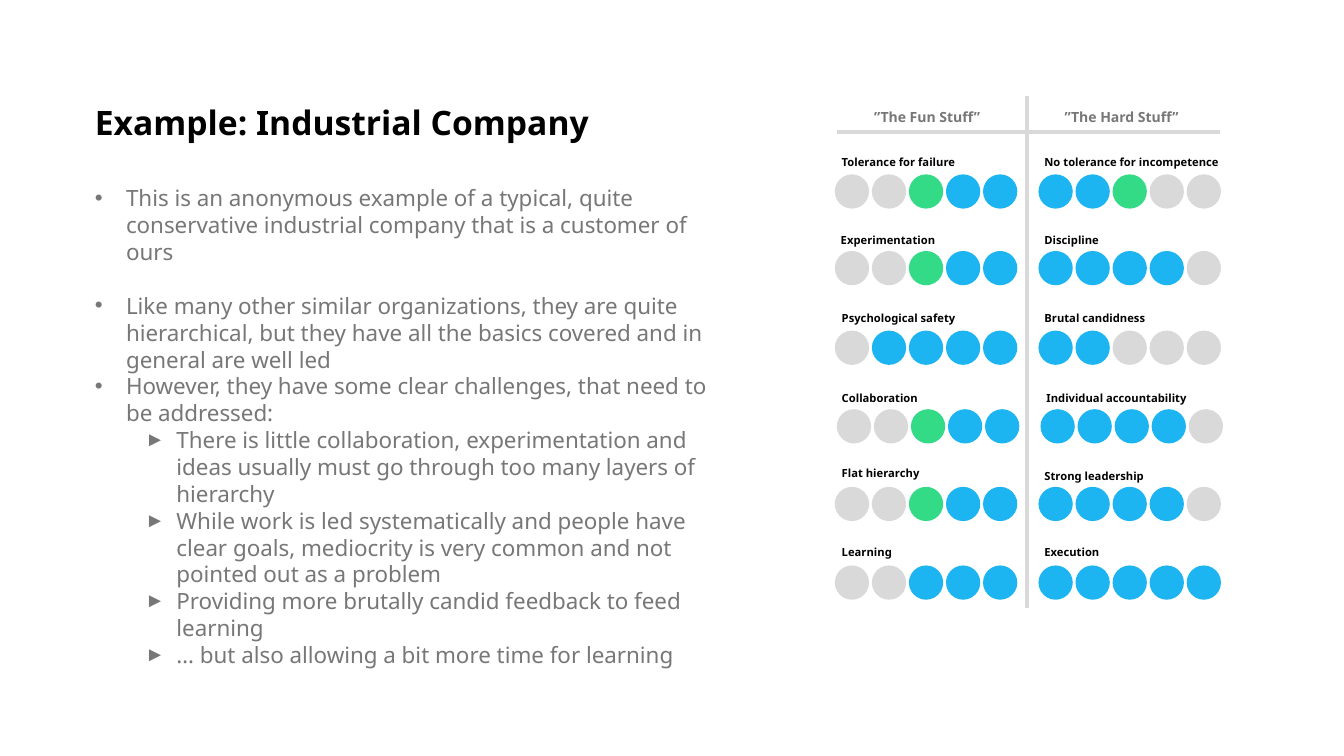
import dataclasses

import lxml.etree
import pptx
import pptx.dml.color
import pptx.enum.shapes
import pptx.enum.text
import pptx.oxml.ns
import pptx.util

Inches = pptx.util.Inches
Pt = pptx.util.Pt
qn = pptx.oxml.ns.qn

FONT = "Noto Sans"
BLACK, GREY, LIGHT = "000000", "777777", "D9D9D9"
DOT_COLOURS = {"b": "1CB5F2", "g": "33DB87", "-": LIGHT}
DOT_SIZE = 0.34
DOT_PITCH = 1.47 / 4
LEFT = pptx.enum.text.PP_ALIGN.LEFT
CENTER = pptx.enum.text.PP_ALIGN.CENTER
TOP = pptx.enum.text.MSO_ANCHOR.TOP
MIDDLE = pptx.enum.text.MSO_ANCHOR.MIDDLE


@dataclasses.dataclass
class Rating:
    """A labelled row of five dots: b is blue, g is green, - is grey."""
    label: str
    label_left: float
    label_top: float
    dots: str
    dots_left: float
    dots_top: float


@dataclasses.dataclass
class Bullet:
    text: str
    level: int = 0
    space_after: float = 0


@dataclasses.dataclass
class BulletStyle:
    symbol: str
    indent: float
    size: int


RATINGS = [
    Rating("Tolerance for failure", 8.25, 1.49, "--gbb", 8.28, 1.73),
    Rating("No tolerance for incompetence", 10.26, 1.49, "bbg--", 10.3, 1.73),
    Rating("Experimentation", 8.24, 2.27, "--gbb", 8.28, 2.49),
    Rating("Discipline", 10.26, 2.27, "bbbb-", 10.3, 2.49),
    Rating("Psychological safety", 8.25, 3.04, "-bbbb", 8.28, 3.28),
    Rating("Brutal candidness", 10.26, 3.04, "bb---", 10.3, 3.28),
    Rating("Collaboration", 8.25, 3.83, "--gbb", 8.3, 4.06),
    Rating("Individual accountability", 10.28, 3.83, "bbbb-", 10.32, 4.06),
    Rating("Flat hierarchy", 8.25, 4.58, "--gbb", 8.28, 4.83),
    Rating("Strong leadership", 10.26, 4.61, "bbbb-", 10.3, 4.83),
    Rating("Learning", 8.25, 5.36, "--bbb", 8.28, 5.61),
    Rating("Execution", 10.26, 5.36, "bbbbb", 10.3, 5.61),
]

BULLETS = [
    Bullet("This is an anonymous example of a typical, quite conservative "
           "industrial company that is a customer of ours", space_after=19.2),
    Bullet("Like many other similar organizations, they are quite hierarchical, "
           "but they have all the basics covered and in general are well led"),
    Bullet("However, they have some clear challenges, that need to be addressed:"),
    Bullet("There is little collaboration, experimentation and ideas usually "
           "must go through too many layers of hierarchy", 1),
    Bullet("While work is led systematically and people have clear goals, "
           "mediocrity is very common and not pointed out as a problem", 1),
    Bullet("Providing more brutally candid feedback to feed learning", 1),
    Bullet("… but also allowing a bit more time for learning", 1),
]
BULLET_STYLES = [BulletStyle("•", 0.31, 100), BulletStyle("►", 0.81, 90)]


def rgb(colour: str) -> pptx.dml.color.RGBColor:
    return pptx.dml.color.RGBColor.from_string(colour)


def place(box, left: float, top: float, width: float, height: float) -> None:
    box.left, box.top = Inches(left), Inches(top)
    box.width, box.height = Inches(width), Inches(height)


def format_frame(frame, anchor) -> None:
    frame.word_wrap = True
    frame.auto_size = pptx.enum.text.MSO_AUTO_SIZE.NONE
    frame.vertical_anchor = anchor


def write(para, text: str, size: float, colour: str, bold: bool = True,
          align=LEFT) -> None:
    para.text = text
    para.alignment = align
    for span in para.runs:
        span.font.name = FONT
        span.font.size = Pt(size)
        span.font.bold = bold
        span.font.color.rgb = rgb(colour)


def add_label(page, text: str, left: float, top: float, width: float,
              size: float, colour: str, align=LEFT) -> None:
    box = page.shapes.add_textbox(Inches(left), Inches(top),
                                  Inches(width), Inches(0.27))
    format_frame(box.text_frame, TOP)
    write(box.text_frame.paragraphs[0], text, size, colour, align=align)


def add_rule(page, x1: float, y1: float, x2: float, y2: float) -> None:
    rule = page.shapes.add_connector(
        pptx.enum.shapes.MSO_CONNECTOR.STRAIGHT,
        Inches(x1), Inches(y1), Inches(x2), Inches(y2))
    rule.line.color.rgb = rgb(LIGHT)
    rule.line.width = Pt(3)
    lxml.etree.SubElement(rule.element.spPr, qn("a:effectLst"))


def add_rating(page, rating: Rating) -> None:
    add_label(page, rating.label, rating.label_left, rating.label_top,
              2.25, 8, BLACK)
    for index, key in enumerate(rating.dots):
        dot = page.shapes.add_shape(
            pptx.enum.shapes.MSO_SHAPE.OVAL,
            Inches(rating.dots_left + index * DOT_PITCH),
            Inches(rating.dots_top), Inches(DOT_SIZE), Inches(DOT_SIZE))
        dot.shadow.inherit = False
        dot.fill.solid()
        dot.fill.fore_color.rgb = rgb(DOT_COLOURS[key])
        dot.line.fill.background()


def set_bullet(para, style: BulletStyle) -> None:
    properties = para._p.get_or_add_pPr()
    properties.set("marL", str(Inches(style.indent)))
    properties.set("indent", str(Inches(-0.31)))
    colour = lxml.etree.SubElement(properties, qn("a:buClr"))
    lxml.etree.SubElement(colour, qn("a:srgbClr"), val=GREY)
    lxml.etree.SubElement(properties, qn("a:buSzPct"), val=str(style.size * 1000))
    lxml.etree.SubElement(properties, qn("a:buFont"), typeface="Arial")
    lxml.etree.SubElement(properties, qn("a:buChar"), char=style.symbol)


def fill_title(title) -> None:
    place(title, 0.84, 1.05, 5.51, 0.37)
    format_frame(title.text_frame, MIDDLE)
    para = title.text_frame.paragraphs[0]
    write(para, "Example: Industrial Company", 24, BLACK)
    para.line_spacing = 0.9


def fill_body(body) -> None:
    place(body, 0.84, 1.78, 6.46, 5.22)
    frame = body.text_frame
    format_frame(frame, TOP)
    frame.text = "\n".join(bullet.text for bullet in BULLETS)
    for para, bullet in zip(frame.paragraphs, BULLETS):
        write(para, bullet.text, 16, GREY, bold=False)
        para.level = bullet.level
        para.line_spacing = 1.0
        para.space_before = Pt(0)
        para.space_after = Pt(bullet.space_after)
        set_bullet(para, BULLET_STYLES[bullet.level])


def main() -> None:
    deck = pptx.Presentation()
    deck.slide_width, deck.slide_height = Inches(13.33), Inches(7.5)
    page = deck.slides.add_slide(deck.slide_layouts[1])
    fill_title(page.shapes.title)
    fill_body(page.placeholders[1])
    add_rule(page, 10.19, 0.95, 10.19, 6.03)
    add_rule(page, 8.3, 1.31, 12.1, 1.31)
    add_label(page, "”The Fun Stuff”", 8.55, 1.03, 1.29, 10, GREY, CENTER)
    add_label(page, "”The Hard Stuff”", 10.44, 1.03, 1.37, 10, GREY, CENTER)
    for rating in RATINGS:
        add_rating(page, rating)
    deck.save("out.pptx")


if __name__ == "__main__":
    main()
